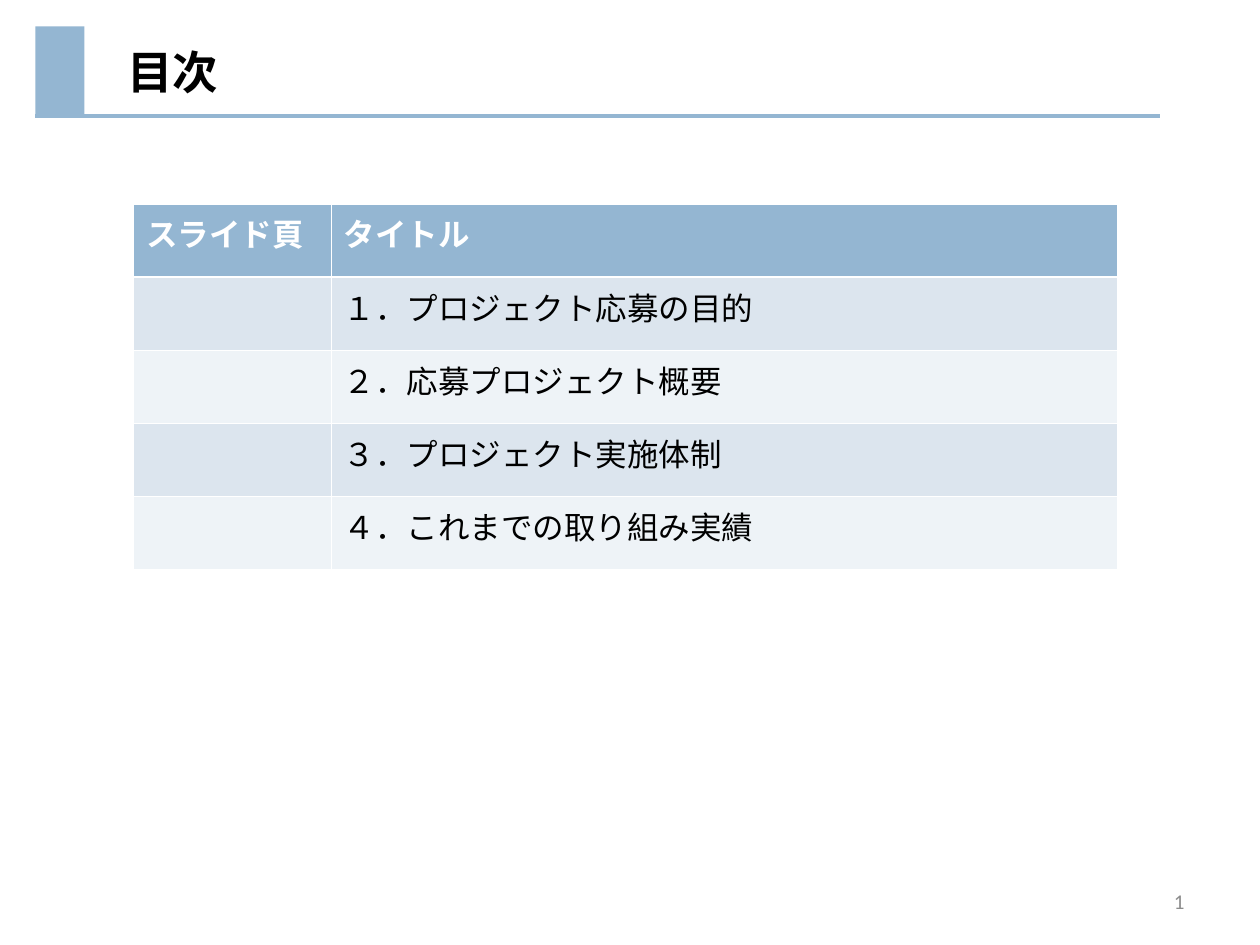
from dataclasses import dataclass

from lxml.etree import SubElement
from pptx import Presentation
from pptx.dml.color import RGBColor
from pptx.enum.shapes import MSO_CONNECTOR, MSO_SHAPE
from pptx.enum.text import MSO_ANCHOR, PP_ALIGN
from pptx.oxml.ns import qn
from pptx.util import Inches, Pt


@dataclass(frozen=True)
class Theme:
    font: str = "Calibri"
    accent: str = "94B6D2"
    bands: tuple = ("DCE5EE", "EEF3F7")
    text: str = "000000"
    header_text: str = "FFFFFF"
    muted: str = "8C8C8C"
    title_size: int = 26
    table_size: int = 18
    number_size: int = 12
    rule_width: int = 2


def box(*lengths):
    return [Inches(length) for length in lengths]


class SlideBuilder:
    def __init__(self, slide, theme):
        self.slide = slide
        self.theme = theme

    def style(self, paragraph, size, color, bold=False, align=PP_ALIGN.LEFT):
        paragraph.alignment = align
        font = paragraph.font
        font.name = self.theme.font
        font.size = Pt(size)
        font.bold = bold
        font.color.rgb = RGBColor.from_string(color)

    def fill(self, target, color):
        target.fill.solid()
        target.fill.fore_color.rgb = RGBColor.from_string(color)

    def title(self, text, *place):
        heading = self.slide.shapes.title
        heading.left, heading.top, heading.width, heading.height = box(*place)
        frame = heading.text_frame
        frame.text = text
        frame.vertical_anchor = MSO_ANCHOR.MIDDLE
        self.style(frame.paragraphs[0], self.theme.title_size, self.theme.text, bold=True)

    def block(self, *place):
        block = self.slide.shapes.add_shape(MSO_SHAPE.RECTANGLE, *box(*place))
        block.shadow.inherit = False
        self.fill(block, self.theme.accent)
        block.line.fill.background()

    def rule(self, *ends):
        rule = self.slide.shapes.add_connector(MSO_CONNECTOR.STRAIGHT, *box(*ends))
        rule.line.color.rgb = RGBColor.from_string(self.theme.accent)
        rule.line.width = Pt(self.theme.rule_width)
        SubElement(rule._element.spPr, qn("a:effectLst"))

    def contents_table(self, rows, left, top, column_widths, row_height):
        """Add a table with a header row; its white borders come from the default style."""
        theme = self.theme
        table = self.slide.shapes.add_table(
            len(rows), len(column_widths),
            *box(left, top, sum(column_widths), row_height * len(rows))).table
        for column, width in zip(table.columns, column_widths):
            column.width = Inches(width)
        for r, row in enumerate(rows):
            is_header = r == 0
            background = theme.accent if is_header else theme.bands[(r - 1) % 2]
            color = theme.header_text if is_header else theme.text
            for c, text in enumerate(row):
                cell = table.cell(r, c)
                cell.text = text
                self.fill(cell, background)
                self.style(cell.text_frame.paragraphs[0], theme.table_size, color, is_header)

    def slide_number(self, number, *place):
        """Add a right-aligned slide number as a live field."""
        frame = self.slide.shapes.add_textbox(*box(*place)).text_frame
        frame.word_wrap = True
        frame.vertical_anchor = MSO_ANCHOR.MIDDLE
        paragraph = frame.paragraphs[0]
        self.style(paragraph, self.theme.number_size, self.theme.muted, align=PP_ALIGN.RIGHT)
        field = SubElement(paragraph._p, qn("a:fld"), type="slidenum",
                           id="{B6F15528-21DE-4FAA-801E-634DDDAF4B2B}")
        SubElement(field, qn("a:rPr"), lang="ja-JP")
        SubElement(field, qn("a:t")).text = str(number)


def main():
    presentation = Presentation()
    presentation.slide_width, presentation.slide_height = box(10, 7.5)
    title_only = presentation.slide_layouts[5]
    builder = SlideBuilder(presentation.slides.add_slide(title_only), Theme())

    chapters = [
        "１．プロジェクト応募の目的",
        "２．応募プロジェクト概要",
        "３．プロジェクト実施体制",
        "４．これまでの取り組み実績",
    ]
    rows = [("スライド頁", "タイトル")] + [("", chapter) for chapter in chapters]
    builder.contents_table(rows, 1.06, 1.62, (1.57, 6.24), 0.58)
    builder.rule(0.28, 0.92, 9.21, 0.92)
    builder.block(0.28, 0.21, 0.39, 0.71)
    builder.slide_number(1, 7.17, 6.95, 2.33, 0.4)
    builder.title("目次", 0.91, 0.21, 6.9, 0.71)

    presentation.save("out.pptx")


if __name__ == "__main__":
    main()
